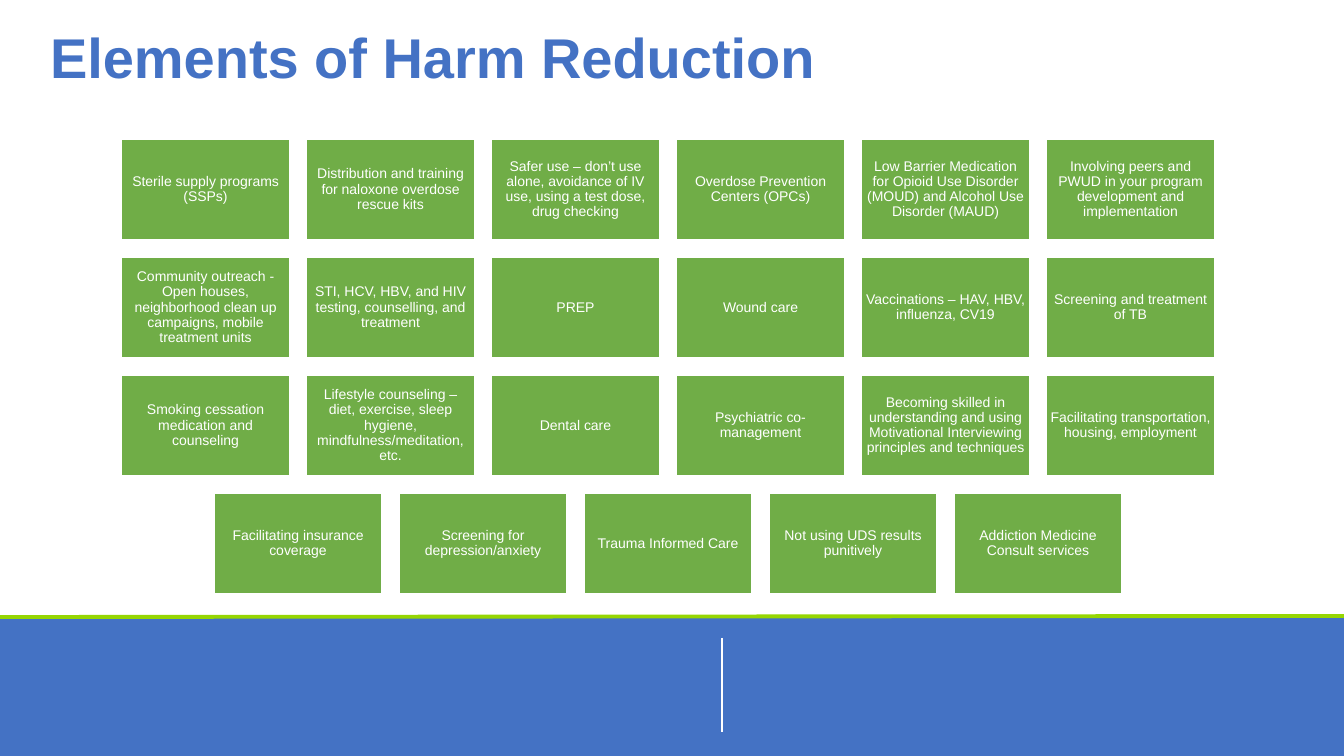
from lxml.etree import SubElement
from pptx import Presentation
from pptx.dml.color import RGBColor
from pptx.enum.shapes import MSO_CONNECTOR, MSO_SHAPE
from pptx.enum.text import MSO_ANCHOR, MSO_AUTO_SIZE, PP_ALIGN
from pptx.oxml.ns import qn
from pptx.util import Emu, Pt

EMU_PER_PX = 914400 / 100.8
SLIDE_WIDTH, SLIDE_HEIGHT = 1344, 756
BAND_TOP = 617

BLUE = RGBColor(0x44, 0x72, 0xC4)
GREEN = RGBColor(0x70, 0xAD, 0x47)
LIME = RGBColor(0x96, 0xD6, 0x03)
WHITE = RGBColor(0xFF, 0xFF, 0xFF)
FONT = "Arial"

GRID_CENTER, GRID_TOP = 668, 139
TILE_WIDTH, TILE_HEIGHT, TILE_GAP = 168, 101, 17

ELEMENTS = [
    [
        "Sterile supply programs (SSPs)",
        "Distribution and training for naloxone overdose rescue kits",
        "Safer use – don’t use alone, avoidance of IV use, using a test dose, drug checking",
        "Overdose Prevention Centers (OPCs)",
        "Low Barrier Medication for Opioid Use Disorder (MOUD) and Alcohol Use Disorder (MAUD)",
        "Involving peers and PWUD in your program development and implementation",
    ],
    [
        "Community outreach - Open houses, neighborhood clean up campaigns, mobile treatment units",
        "STI, HCV, HBV, and HIV testing, counselling, and treatment",
        "PREP",
        "Wound care",
        "Vaccinations – HAV, HBV, influenza, CV19",
        "Screening and treatment of TB",
    ],
    [
        "Smoking cessation medication and counseling",
        "Lifestyle counseling – diet, exercise, sleep hygiene, mindfulness/meditation, etc.",
        "Dental care",
        "Psychiatric co-management",
        "Becoming skilled in understanding and using Motivational Interviewing "
        "principles and techniques",
        "Facilitating transportation, housing, employment",
    ],
    [
        "Facilitating insurance coverage",
        "Screening for depression/anxiety",
        "Trauma Informed Care",
        "Not using UDS results punitively",
        "Addiction Medicine Consult services",
    ],
]


def px(length):
    return Emu(round(length * EMU_PER_PX))


def write_text(frame, text, size, color, align, anchor, inset, bold=False):
    frame.word_wrap = True
    frame.auto_size = MSO_AUTO_SIZE.NONE
    frame.vertical_anchor = anchor
    frame.margin_left = frame.margin_right = px(inset)
    frame.margin_top = frame.margin_bottom = px(inset)
    paragraph = frame.paragraphs[0]
    paragraph.alignment = align
    paragraph.line_spacing = 0.9
    run = paragraph.add_run()
    run.text = text
    run.font.name = FONT
    run.font.size = Pt(size)
    run.font.bold = bold
    run.font.color.rgb = color


def add_rectangle(slide, left, top, width, height, color):
    rectangle = slide.shapes.add_shape(
        MSO_SHAPE.RECTANGLE, px(left), px(top), px(width), px(height)
    )
    rectangle.shadow.inherit = False
    rectangle.fill.solid()
    rectangle.fill.fore_color.rgb = color
    rectangle.line.fill.background()
    return rectangle


def add_rule(slide, start, end, color, weight):
    rule = slide.shapes.add_connector(
        MSO_CONNECTOR.STRAIGHT, *map(px, start), *map(px, end)
    )
    rule.line.color.rgb = color
    rule.line.width = Pt(weight)
    SubElement(rule._element.spPr, qn("a:effectLst"))


def add_title(slide, text):
    title = slide.shapes.title
    title.left, title.top = px(50), px(30)
    title.width, title.height = px(1235), px(108)
    write_text(title.text_frame, text, 40, BLUE, PP_ALIGN.LEFT, MSO_ANCHOR.TOP, 0, True)


def add_tile(slide, left, top, text):
    tile = add_rectangle(slide, left, top, TILE_WIDTH, TILE_HEIGHT, GREEN)
    tile.line.color.rgb = WHITE
    tile.line.width = Pt(1)
    write_text(tile.text_frame, text, 10, WHITE, PP_ALIGN.CENTER, MSO_ANCHOR.MIDDLE, 4)


def add_tile_row(slide, top, texts):
    pitch = TILE_WIDTH + TILE_GAP
    row_left = GRID_CENTER - (len(texts) * pitch - TILE_GAP) / 2
    for column, text in enumerate(texts):
        add_tile(slide, row_left + column * pitch, top, text)


def add_footer(slide):
    add_rectangle(slide, 0, BAND_TOP, SLIDE_WIDTH, SLIDE_HEIGHT - BAND_TOP, BLUE)
    add_rule(slide, (0, BAND_TOP), (SLIDE_WIDTH, BAND_TOP - 1), LIME, 2.75)
    add_rule(slide, (722, 638), (722, 732), WHITE, 1)


def main():
    presentation = Presentation()
    presentation.slide_width = px(SLIDE_WIDTH)
    presentation.slide_height = px(SLIDE_HEIGHT)
    slide = presentation.slides.add_slide(presentation.slide_layouts[5])
    add_footer(slide)
    add_title(slide, "Elements of Harm Reduction")
    for row, texts in enumerate(ELEMENTS):
        add_tile_row(slide, GRID_TOP + row * (TILE_HEIGHT + TILE_GAP), texts)
    presentation.save("out.pptx")


if __name__ == "__main__":
    main()
